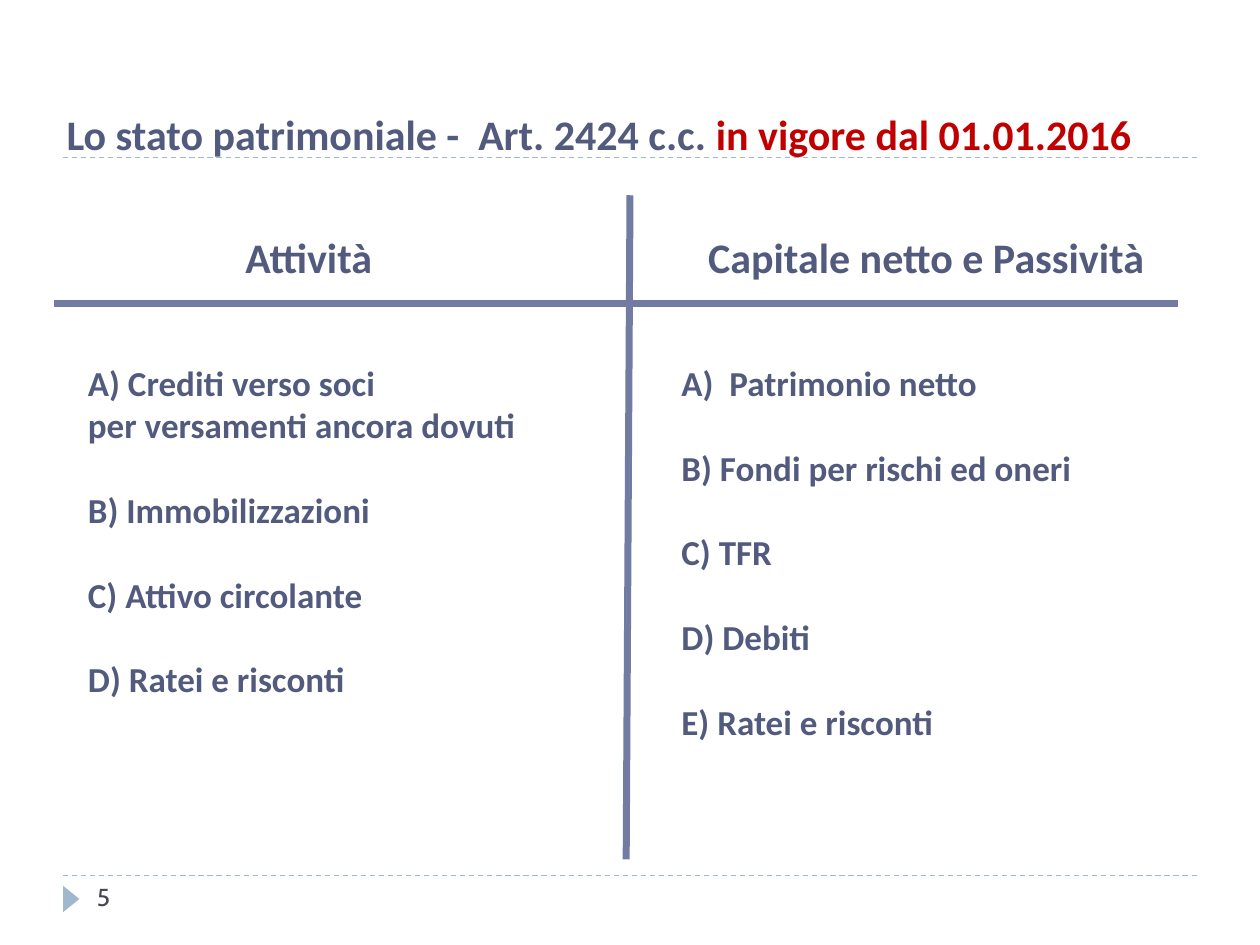
from lxml import etree
from pptx import Presentation
from pptx.dml.color import RGBColor
from pptx.enum.dml import MSO_LINE
from pptx.enum.shapes import MSO_CONNECTOR, MSO_SHAPE
from pptx.enum.text import MSO_AUTO_SIZE, PP_ALIGN
from pptx.oxml.ns import qn
from pptx.util import Inches, Pt

STRAIGHT = MSO_CONNECTOR.STRAIGHT
TRIANGLE = MSO_SHAPE.ISOSCELES_TRIANGLE
DASH = MSO_LINE.DASH
GROW = MSO_AUTO_SIZE.SHAPE_TO_FIT_TEXT
LEFT = PP_ALIGN.LEFT
RIGHT = PP_ALIGN.RIGHT

SLATE = RGBColor(0x52, 0x5B, 0x7E)
RED = RGBColor(0xC0, 0x00, 0x00)
INDIGO = RGBColor(0x72, 0x7C, 0xA3)
PALE_BLUE = RGBColor(0x9F, 0xB8, 0xCD)
CHARCOAL = RGBColor(0x46, 0x46, 0x53)

ITEM_GAP = Pt(24.4)
ASSETS = [
    "A) Crediti verso soci",
    "per versamenti ancora dovuti",
    "B) Immobilizzazioni",
    "C) Attivo circolante",
    "D) Ratei e risconti",
]
LIABILITIES = [
    "Patrimonio netto",
    "B) Fondi per rischi ed oneri",
    "C) TFR",
    "D) Debiti",
    "E) Ratei e risconti",
]


def add_line(page, start, end, color, width, dash=None):
    line = page.shapes.add_connector(
        STRAIGHT, *[Inches(value) for value in (*start, *end)]
    )
    line.line.color.rgb = color
    line.line.width = Pt(width)
    if dash is not None:
        line.line.dash_style = dash
    etree.SubElement(line._element.spPr, qn("a:effectLst"))


def style_span(span, size, color=SLATE, font="Calibri", bold=True):
    span.font.size = Pt(size)
    span.font.color.rgb = color
    span.font.name = font
    span.font.bold = bold


def add_box(page, left, top, width, height, wrap=True):
    box = page.shapes.add_textbox(
        Inches(left), Inches(top), Inches(width), Inches(height)
    )
    box.text_frame.word_wrap = wrap
    box.text_frame.auto_size = GROW
    return box


def add_title(page):
    box = add_box(page, 0.43, 0.81, 8.91, 0.5)
    para = box.text_frame.paragraphs[0]
    parts = [
        ("Lo stato patrimoniale -  Art. 2424 c.c. ", SLATE),
        ("in vigore dal 01.01.2016", RED),
    ]
    for text, color in parts:
        span = para.add_run()
        span.text = text
        style_span(span, 24, color)


def add_heading(page, text, left, width, align):
    box = add_box(page, left, 1.79, width, 0.5, wrap=False)
    box.text_frame.text = text
    para = box.text_frame.paragraphs[0]
    para.alignment = align
    style_span(para.runs[0], 24)


def add_items(page, items, left, width, height):
    box = add_box(page, left, 2.82, width, height)
    box.text_frame.text = "\n".join(items)
    for index, para in enumerate(box.text_frame.paragraphs):
        if index and ")" in para.text:
            para.space_before = ITEM_GAP
        style_span(para.runs[0], 20)
    return box


def set_letter_bullet(para, indent):
    properties = para._p.get_or_add_pPr()
    properties.set("marL", str(Inches(indent)))
    properties.set("indent", str(-Inches(indent)))
    font = etree.SubElement(properties, qn("a:buFont"))
    font.set("typeface", "+mj-lt")
    bullet = etree.SubElement(properties, qn("a:buAutoNum"))
    bullet.set("type", "alphaUcParenR")


def add_footer(page):
    marker = page.shapes.add_shape(
        TRIANGLE, Inches(0.46), Inches(7.07), Inches(0.21), Inches(0.13)
    )
    marker.rotation = 90
    marker.shadow.inherit = False
    marker.fill.solid()
    marker.fill.fore_color.rgb = PALE_BLUE
    marker.line.fill.background()
    box = add_box(page, 0.67, 6.95, 2.17, 0.4)
    box.text_frame.auto_size = MSO_AUTO_SIZE.NONE
    box.text_frame.text = "5"
    style_span(box.text_frame.paragraphs[0].runs[0], 14, CHARCOAL, "Cabin", False)


def main():
    deck = Presentation()
    deck.slide_width = Inches(10)
    deck.slide_height = Inches(7.5)
    page = deck.slides.add_slide(deck.slide_layouts[6])

    for y in (6.95, 1.25):
        add_line(page, (0.5, y), (9.5, y), PALE_BLUE, 0.75, DASH)
    add_title(page)
    add_heading(page, "Attività", 1.85, 1.23, LEFT)
    add_heading(page, "Capitale netto e Passività", 5.47, 3.71, RIGHT)
    add_items(page, ASSETS, 0.6, 4.37, 2.79)
    liabilities = add_items(page, LIABILITIES, 5.31, 4.49, 3.13)
    set_letter_bullet(liabilities.text_frame.paragraphs[0], 0.38)
    add_line(page, (0.43, 2.41), (9.35, 2.41), INDIGO, 4)
    add_line(page, (4.97, 6.82), (5, 1.55), INDIGO, 4)
    add_footer(page)

    deck.save("out.pptx")


if __name__ == "__main__":
    main()
